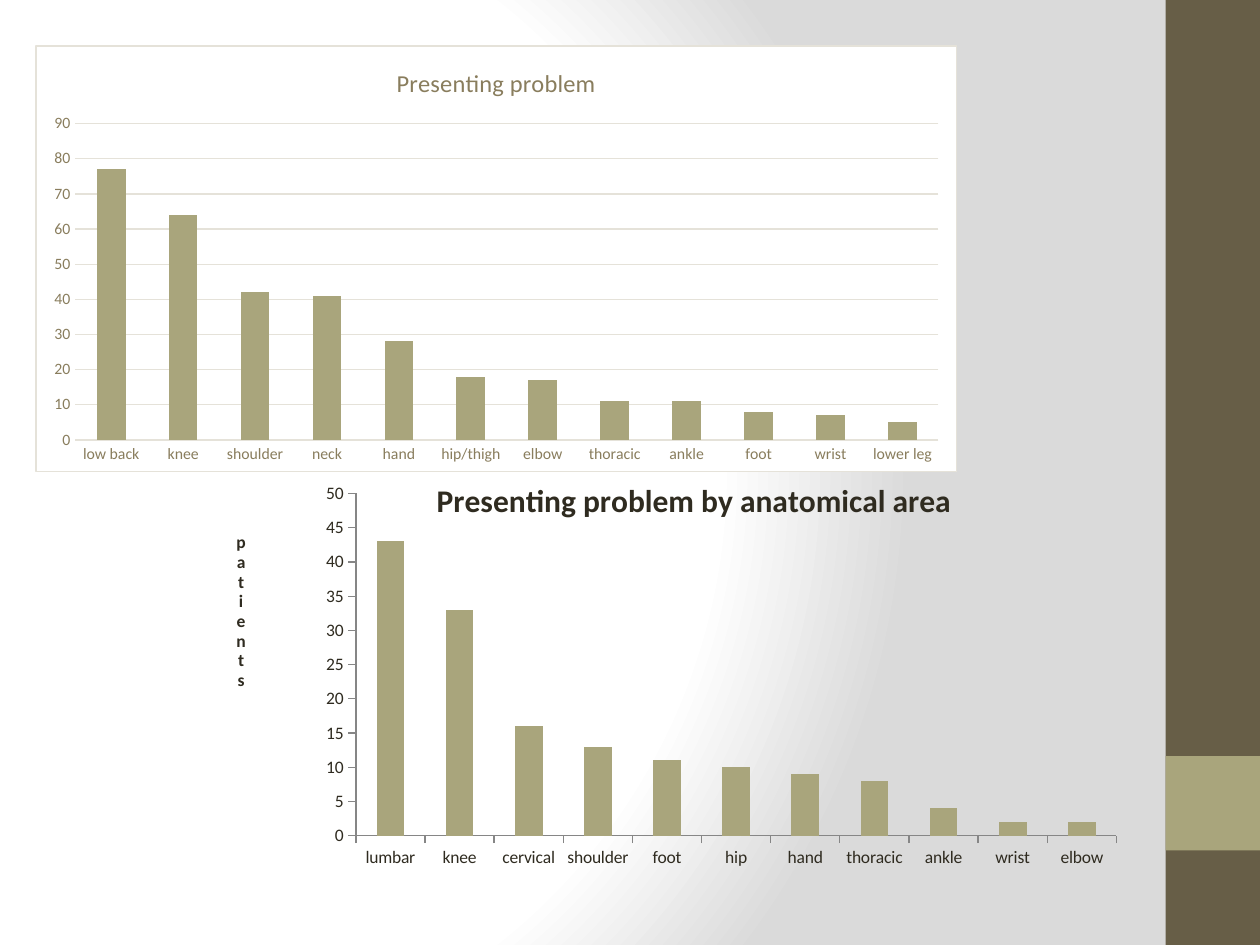
from lxml.etree import SubElement
from pptx import Presentation
from pptx.chart.data import CategoryChartData
from pptx.dml.color import RGBColor
from pptx.enum.chart import XL_CHART_TYPE, XL_TICK_MARK
from pptx.enum.shapes import MSO_SHAPE
from pptx.oxml import parse_xml
from pptx.oxml.ns import nsdecls, qn
from pptx.util import Pt

COLORS = {
    "white": "FFFFFF",
    "shade": "DADADA",
    "brown": "675E47",
    "olive": "A9A57C",
    "text": "2F2B20",
    "muted": "897D5D",
    "grid": "E5E2D9",
    "axis": "868686",
}
FONT = "Calibri"

PROBLEMS = {
    "low back": 77, "knee": 64, "shoulder": 42, "neck": 41, "hand": 28, "hip/thigh": 18,
    "elbow": 17, "thoracic": 11, "ankle": 11, "foot": 8, "wrist": 7, "lower leg": 5,
}
AREAS = {
    "lumbar": 43, "knee": 33, "cervical": 16, "shoulder": 13, "foot": 11, "hip": 10,
    "hand": 9, "thoracic": 8, "ankle": 4, "wrist": 2, "elbow": 2,
}


def rgb(name):
    return RGBColor.from_string(COLORS[name])


def set_background(slide):
    """Fill the background with a circular gradient centred left of the middle."""
    slide.background.fill.gradient()
    gradient = slide.element.find(".//" + qn("a:gradFill"))
    stops = "".join(
        f'<a:gs pos="{position * 1000}"><a:srgbClr val="{COLORS[color]}"/></a:gs>'
        for position, color in ((0, "white"), (75, "white"), (100, "shade"))
    )
    gradient.getparent().replace(gradient, parse_xml(
        f'<a:gradFill {nsdecls("a")} rotWithShape="1"><a:gsLst>{stops}</a:gsLst>'
        '<a:path path="circle">'
        '<a:fillToRect l="20000" t="50000" r="100000" b="50000"/>'
        '</a:path></a:gradFill>'
    ))


def add_block(slide, left, top, width, height, color):
    shape = slide.shapes.add_shape(
        MSO_SHAPE.RECTANGLE, Pt(left), Pt(top), Pt(width), Pt(height))
    shape.shadow.inherit = False
    shape.fill.solid()
    shape.fill.fore_color.rgb = rgb(color)
    shape.line.fill.background()


def style_font(font, size, color, bold=False):
    font.name = FONT
    font.size = Pt(size)
    font.bold = bold
    font.color.rgb = rgb(color)


def set_title(title, text, size, color, bold=False):
    title.text_frame.text = text
    style_font(title.text_frame.paragraphs[0].runs[0].font, size, color, bold)


def set_layout(element, index, **values):
    """Place a chart part by fractions of the chart; index is where its layout belongs."""
    for old_layout in element.findall(qn("c:layout")):
        element.remove(old_layout)
    layout = parse_xml(f'<c:layout {nsdecls("c")}><c:manualLayout/></c:layout>')
    for tag, value in values.items():
        SubElement(layout[0], qn(f"c:{tag}")).set("val", str(value))
    element.insert(index, layout)


def add_column_chart(slide, left, top, width, height, values):
    data = CategoryChartData()
    data.categories = list(values)
    data.add_series("Series 1", list(values.values()))
    chart = slide.shapes.add_chart(
        XL_CHART_TYPE.COLUMN_CLUSTERED, Pt(left), Pt(top), Pt(width), Pt(height), data).chart
    chart.has_legend = False
    style_font(chart.font, 10, "text")
    plot = chart.plots[0]
    plot.gap_width = 150
    plot.vary_by_categories = False
    fill = plot.series[0].format.fill
    fill.solid()
    fill.fore_color.rgb = rgb("olive")
    return chart


def style_axes(chart, size, color, tick_mark, line_color=None):
    for axis in (chart.category_axis, chart.value_axis):
        style_font(axis.tick_labels.font, size, color)
        axis.major_tick_mark = tick_mark
        axis.minor_tick_mark = XL_TICK_MARK.NONE
        axis.has_major_gridlines = False
        line = axis.format.line
        if line_color:
            line.color.rgb = rgb(line_color)
            line.width = Pt(0.75)
        else:
            line.fill.background()


def set_chart_frame(chart, fill, border):
    chart.element.find(qn("c:chart")).addnext(parse_xml(
        f'<c:spPr {nsdecls("c", "a")}>'
        f'<a:solidFill><a:srgbClr val="{COLORS[fill]}"/></a:solidFill>'
        f'<a:ln w="{Pt(0.75)}"><a:solidFill><a:srgbClr val="{COLORS[border]}"/></a:solidFill></a:ln>'
        '</c:spPr>'
    ))


def add_problem_chart(slide):
    chart = add_column_chart(slide, 20.16, 25.92, 527, 244, PROBLEMS)
    set_title(chart.chart_title, "Presenting problem", 14, "muted")
    style_axes(chart, 9, "muted", XL_TICK_MARK.NONE)
    chart.value_axis.maximum_scale = 90
    chart.value_axis.major_unit = 10
    gridline = chart.value_axis.major_gridlines.format.line
    gridline.color.rgb = rgb("grid")
    gridline.width = Pt(0.75)
    set_chart_frame(chart, "white", "grid")


def add_area_chart(slide):
    chart = add_column_chart(slide, 99.36, 252.72, 565.2, 287.28, AREAS)
    title = chart.chart_title
    set_title(title, "Presenting problem by anatomical area", 18, "text", bold=True)
    set_layout(title._element, 1, xMode="edge", yMode="edge", x=0.26, y=0.06)
    title._element.find(qn("c:overlay")).set("val", "1")

    style_axes(chart, 10, "text", XL_TICK_MARK.OUTSIDE, "axis")
    value_axis = chart.value_axis
    value_axis.maximum_scale = 50
    value_axis.major_unit = 5
    axis_title = value_axis.axis_title
    set_title(axis_title, "patients", 10, "text", bold=True)
    body = axis_title._element.find(".//" + qn("a:bodyPr"))
    body.set("rot", "0")
    body.set("vert", "wordArtVert")
    set_layout(axis_title._element, 1, xMode="edge", yMode="edge", x=0.06, y=0.17)

    plot_area = chart.element.find(".//" + qn("c:plotArea"))
    set_layout(plot_area, 0, layoutTarget="inner", xMode="edge", yMode="edge",
               x=0.184, y=0.102, w=0.769, h=0.681)


def main():
    presentation = Presentation()
    presentation.slide_width = Pt(720)
    presentation.slide_height = Pt(540)
    slide = presentation.slides.add_slide(presentation.slide_layouts[6])
    set_background(slide)
    add_block(slide, 666, 0, 54, 540, "brown")
    add_block(slide, 666, 432, 54, 54, "olive")
    add_problem_chart(slide)
    add_area_chart(slide)
    presentation.save("out.pptx")


if __name__ == "__main__":
    main()
